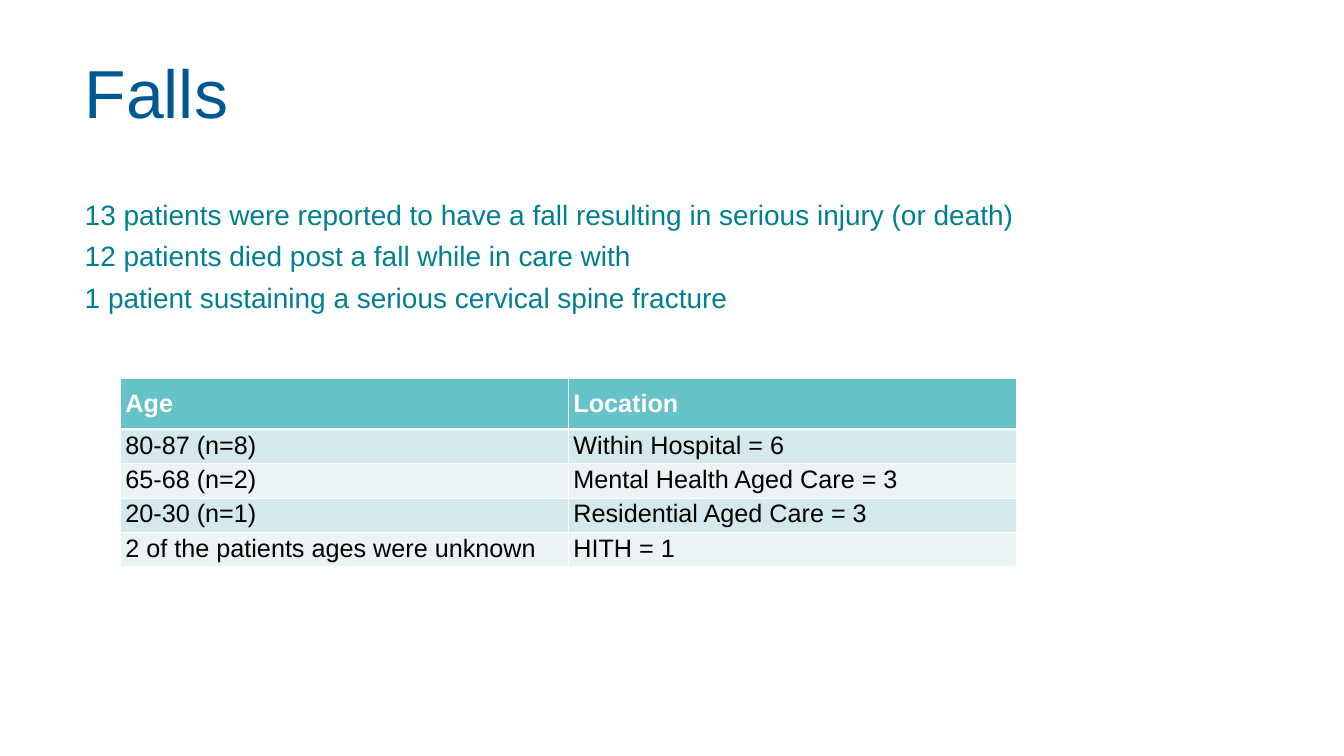
from lxml.etree import SubElement
from pptx import Presentation
from pptx.dml.color import RGBColor
from pptx.enum.text import MSO_ANCHOR as Anchor
from pptx.oxml.ns import qn
from pptx.util import Pt

TITLE = ["Falls"]
FACTS = [
    "13 patients were reported to have a fall resulting in serious injury (or death)",
    "12 patients died post a fall while in care with",
    "1 patient sustaining a serious cervical spine fracture",
]
ROWS = [
    ("Age", "Location"),
    ("80-87 (n=8)", "Within Hospital = 6"),
    ("65-68 (n=2)", "Mental Health Aged Care = 3"),
    ("20-30 (n=1)", "Residential Aged Care = 3"),
    ("2 of the patients ages were unknown", "HITH = 1"),
]
NAVY, TEAL, WHITE, BLACK = "005892", "007F92", "FFFFFF", "000000"
HEAD, BANDS = "64C2C8", ("EAF4F5", "D3E9EB")
LEFT = 121
COL_W, HEAD_H, ROW_H = 640, 73.4, 47.3


def rgb(code):
    return RGBColor.from_string(code)


def style(font, size, color, bold=False):
    font.name, font.size, font.bold = "Arial", Pt(size), bold
    font.color.rgb = rgb(color)


def add_text(slide, lines, box, size, color, pitch, after=0, anchor=Anchor.TOP):
    frame = slide.shapes.add_textbox(*map(Pt, box)).text_frame
    frame.word_wrap = True
    frame.vertical_anchor = anchor
    frame.margin_left = frame.margin_right = 0
    frame.margin_top = frame.margin_bottom = 0
    frame.text = "\n".join(lines)
    for par in frame.paragraphs:
        par.line_spacing, par.space_after = Pt(pitch), Pt(after)
        for run in par.runs:
            style(run.font, size, color)


def add_edges(cell, widths):
    """Draw white cell borders; the fill must be set afterwards."""
    props = cell._tc.get_or_add_tcPr()
    for side, width in widths.items():
        line = SubElement(props, qn(f"a:ln{side}"), w=str(Pt(width)))
        fill = SubElement(line, qn("a:solidFill"))
        SubElement(fill, qn("a:srgbClr"), val=WHITE)


def add_table(slide):
    high = HEAD_H + ROW_H * (len(ROWS) - 1)
    table = slide.shapes.add_table(
        len(ROWS), 2, Pt(172), Pt(540), Pt(2 * COL_W), Pt(high)).table
    for col in table.columns:
        col.width = Pt(COL_W)
    for r, texts in enumerate(ROWS):
        head = r == 0
        table.rows[r].height = Pt(HEAD_H if head else ROW_H)
        for c, text in enumerate(texts):
            cell = table.cell(r, c)
            cell.text = text
            cell.margin_top = cell.margin_bottom = Pt(2.9)
            cell.vertical_anchor = Anchor.MIDDLE if head else Anchor.TOP
            add_edges(cell, {"L": 1, "R": 1, "T": 3 if r == 1 else 1,
                             "B": 3 if head else 1})
            cell.fill.solid()
            cell.fill.fore_color.rgb = rgb(HEAD if head else BANDS[r % 2])
            font = cell.text_frame.paragraphs[0].runs[0].font
            style(font, 36, WHITE if head else BLACK, head)


def main():
    deck = Presentation()
    deck.slide_width, deck.slide_height = Pt(1920), Pt(1080)
    slide = deck.slides.add_slide(deck.slide_layouts[6])
    add_text(slide, TITLE, (LEFT, 88.5, 1667, 91.5), 97, NAVY, 108,
             anchor=Anchor.MIDDLE)
    add_text(slide, FACTS, (LEFT, 281.5, 1700, 572), 40, TEAL, 48, 11.3)
    add_table(slide)
    deck.save("out.pptx")


if __name__ == "__main__":
    main()
